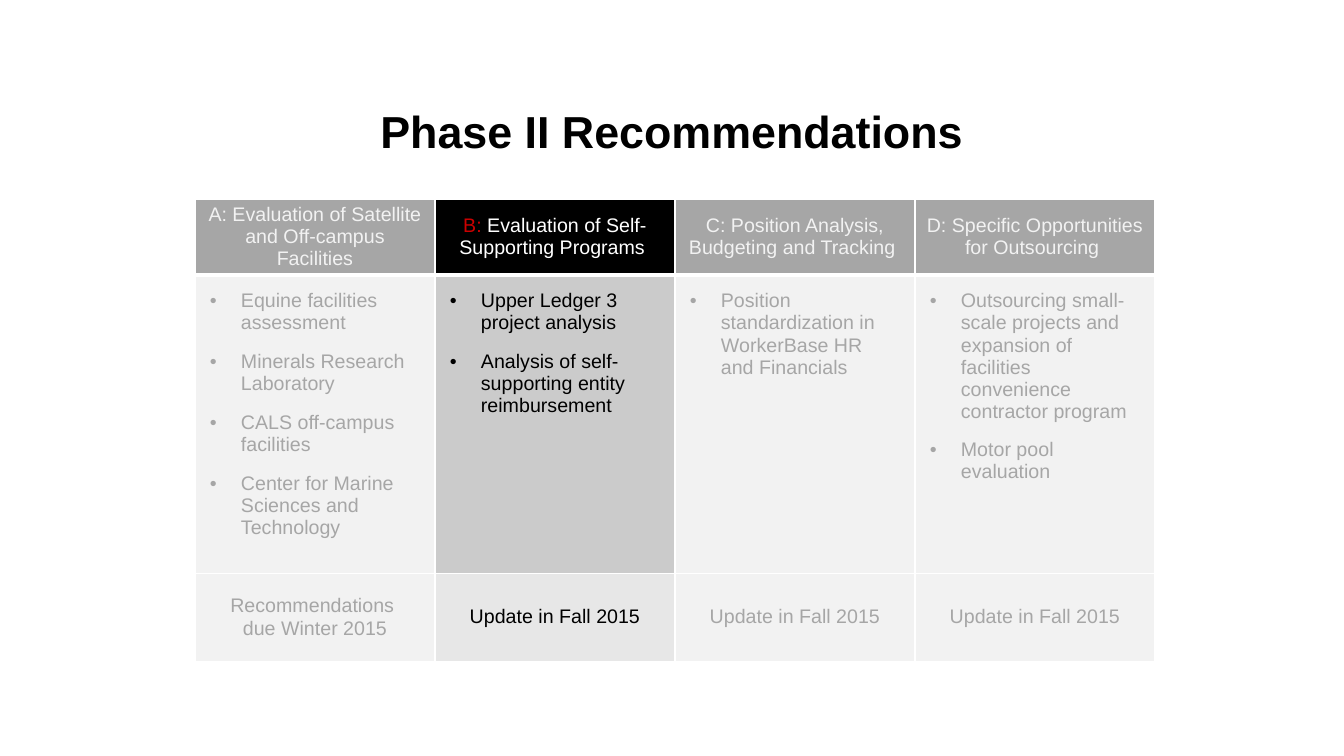
from dataclasses import dataclass

from lxml import etree
from pptx import Presentation
from pptx.dml.color import RGBColor
from pptx.enum.text import MSO_ANCHOR, PP_ALIGN
from pptx.oxml.ns import qn
from pptx.util import Emu, Pt

CENTER = PP_ALIGN.CENTER
LEFT = PP_ALIGN.LEFT
TOP = MSO_ANCHOR.TOP
MIDDLE = MSO_ANCHOR.MIDDLE

EMU_PER_PX = 914400 / 100.8
FONT = "Arial"
BLACK, WHITE, RED = "000000", "FFFFFF", "CC0000"
GREY, PALE = "A6A6A6", "F2F2F2"

COLUMN_WIDTH = 240
ROW_HEIGHTS = (69, 298, 88)
BODY_INSET = 15
BULLET_INDENT = 31


@dataclass
class Palette:
    header_fill: str
    letter: str
    header_text: str
    body_fill: str
    footer_fill: str
    text: str


@dataclass
class Topic:
    letter: str
    heading: str
    items: list[str]
    status: list[str]
    palette: Palette


MUTED = Palette(GREY, PALE, PALE, PALE, PALE, GREY)
ACTIVE = Palette(BLACK, RED, WHITE, "CBCBCB", "E7E7E7", BLACK)

TOPICS = [
    Topic("A: ", "Evaluation of Satellite and Off-campus Facilities",
          ["Equine facilities assessment", "Minerals Research Laboratory",
           "CALS off-campus facilities",
           "Center for Marine Sciences and Technology"],
          ["Recommendations ", "due Winter 2015"], MUTED),
    Topic("B: ", "Evaluation of Self-Supporting Programs ",
          ["Upper Ledger 3 project analysis",
           "Analysis of self-supporting entity reimbursement"],
          ["Update in Fall 2015"], ACTIVE),
    Topic("C: ", "Position Analysis, Budgeting and Tracking ",
          ["Position standardization in WorkerBase HR and Financials"],
          ["Update in Fall 2015"], MUTED),
    Topic("D: ", "Specific Opportunities for Outsourcing ",
          ["Outsourcing small-scale projects and expansion of facilities "
           "convenience contractor program", "Motor pool evaluation"],
          ["Update in Fall 2015"], MUTED),
]


def px(length: int) -> Emu:
    return Emu(round(length * EMU_PER_PX))


def rgb(color: str) -> RGBColor:
    return RGBColor.from_string(color)


def add_run(paragraph, text: str, color: str, size: int = 14,
            bold: bool = False) -> None:
    run = paragraph.add_run()
    run.text = text
    run.font.name = FONT
    run.font.size = Pt(size)
    run.font.bold = bold
    run.font.color.rgb = rgb(color)


def add_bullet(paragraph) -> None:
    properties = paragraph._p.get_or_add_pPr()
    properties.set("marL", str(px(BULLET_INDENT)))
    properties.set("indent", str(-px(BULLET_INDENT)))
    etree.SubElement(properties, qn("a:buFont")).set("typeface", FONT)
    etree.SubElement(properties, qn("a:buChar")).set("char", "•")


def style_cell(cell, fill: str, anchor, bottom_width: int = 1) -> None:
    # Borders come before the fill in the cell properties
    properties = cell._tc.get_or_add_tcPr()
    for side, width in (("L", 1), ("R", 1), ("T", 1), ("B", bottom_width)):
        line = etree.SubElement(properties, qn(f"a:ln{side}"))
        line.set("w", str(Pt(width)))
        solid = etree.SubElement(line, qn("a:solidFill"))
        etree.SubElement(solid, qn("a:srgbClr")).set("val", WHITE)
    cell.fill.solid()
    cell.fill.fore_color.rgb = rgb(fill)
    cell.vertical_anchor = anchor


def fill_header(cell, topic: Topic) -> None:
    palette = topic.palette
    style_cell(cell, palette.header_fill, MIDDLE, bottom_width=3)
    paragraph = cell.text_frame.paragraphs[0]
    paragraph.alignment = CENTER
    if palette.letter == palette.header_text:
        add_run(paragraph, topic.letter + topic.heading, palette.header_text)
    else:
        add_run(paragraph, topic.letter, palette.letter)
        add_run(paragraph, topic.heading, palette.header_text)


def fill_body(cell, topic: Topic) -> None:
    style_cell(cell, topic.palette.body_fill, TOP)
    cell.margin_left = cell.margin_right = px(BODY_INSET)
    cell.margin_top = cell.margin_bottom = px(BODY_INSET)
    frame = cell.text_frame
    for index, item in enumerate(topic.items):
        paragraph = frame.add_paragraph() if index else frame.paragraphs[0]
        add_bullet(paragraph)
        paragraph.alignment = LEFT
        paragraph.space_after = Pt(12)
        add_run(paragraph, item, topic.palette.text)


def fill_footer(cell, topic: Topic) -> None:
    style_cell(cell, topic.palette.footer_fill, MIDDLE)
    paragraph = cell.text_frame.paragraphs[0]
    paragraph.alignment = CENTER
    paragraph.space_after = Pt(12)
    for index, line in enumerate(topic.status):
        if index:
            paragraph.add_line_break()
        add_run(paragraph, line, topic.palette.text)


def add_title(slide) -> None:
    title = slide.shapes.title
    title.left, title.top = px(168), px(74)
    title.width, title.height = px(1008), px(113)
    frame = title.text_frame
    frame.word_wrap = True
    frame.vertical_anchor = MIDDLE
    paragraph = frame.paragraphs[0]
    paragraph.alignment = CENTER
    add_run(paragraph, "Phase II Recommendations", BLACK, 32, True)


def add_topic_table(slide) -> None:
    table = slide.shapes.add_table(
        len(ROW_HEIGHTS), len(TOPICS), px(195), px(199),
        px(COLUMN_WIDTH * len(TOPICS)), px(sum(ROW_HEIGHTS))).table
    table.first_row = False
    table.horz_banding = False
    for row, height in zip(table.rows, ROW_HEIGHTS):
        row.height = px(height)
    for index, topic in enumerate(TOPICS):
        table.columns[index].width = px(COLUMN_WIDTH)
        fill_header(table.cell(0, index), topic)
        fill_body(table.cell(1, index), topic)
        fill_footer(table.cell(2, index), topic)


def main() -> None:
    presentation = Presentation()
    presentation.slide_width = px(1344)
    presentation.slide_height = px(756)
    slide = presentation.slides.add_slide(presentation.slide_layouts[5])
    add_title(slide)
    add_topic_table(slide)
    presentation.save("out.pptx")


if __name__ == "__main__":
    main()
